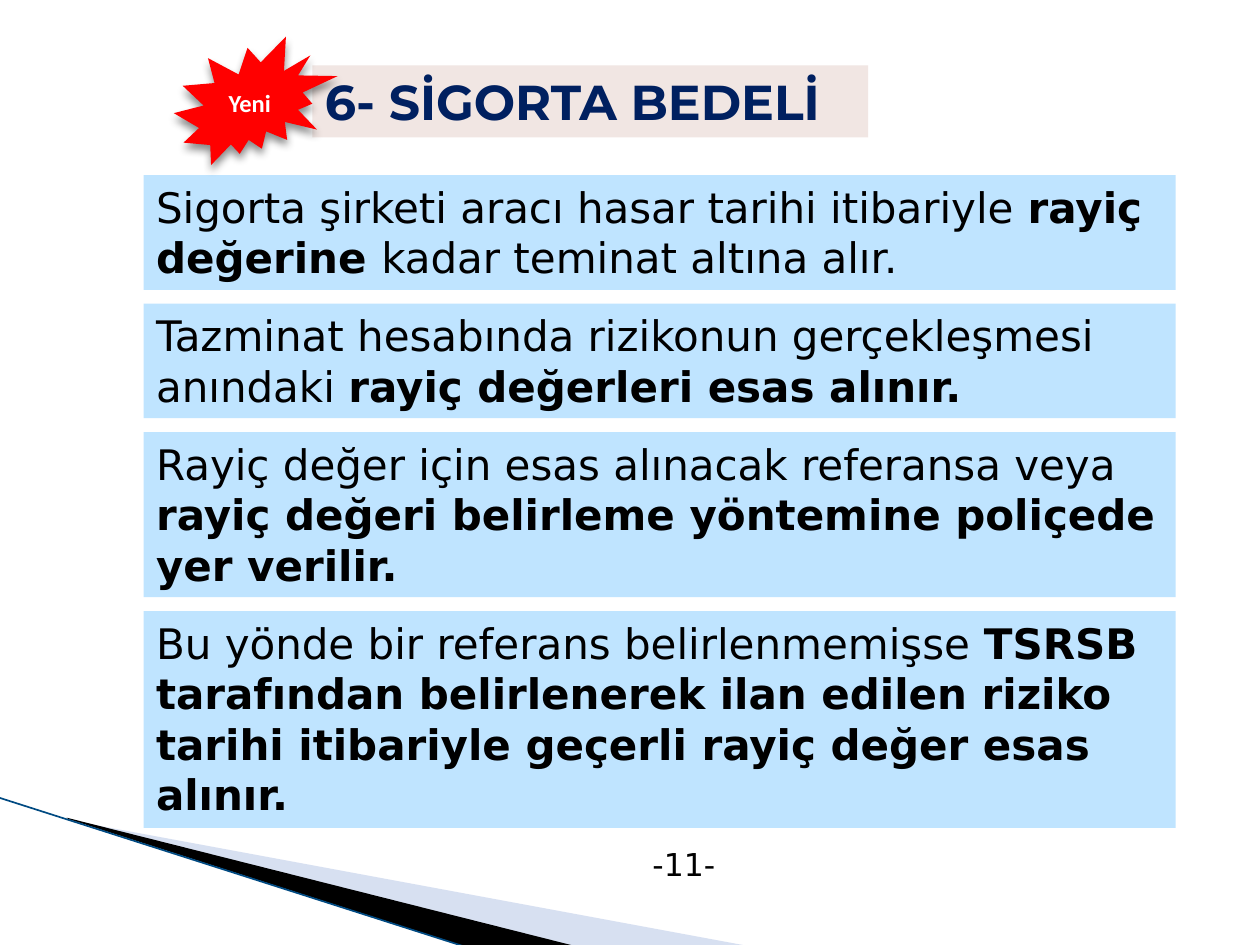
from lxml.etree import SubElement
from pptx import Presentation
from pptx.dml.color import RGBColor
from pptx.enum.shapes import MSO_CONNECTOR, MSO_SHAPE
from pptx.enum.text import MSO_ANCHOR, MSO_AUTO_SIZE, PP_ALIGN
from pptx.oxml.ns import qn
from pptx.util import Inches, Pt

HUES = {
    "pale": "9DB2DD", "black": "000000", "edge": "004A82", "title": "F1E6E3",
    "navy": "002060", "box": "BFE4FF", "seal": "FF0000", "white": "FFFFFF",
}


def paint(shape, hue):
    shape.shadow.inherit = False
    shape.fill.solid()
    shape.fill.fore_color.rgb = RGBColor.from_string(HUES[hue])
    shape.line.fill.background()


def write(shape, parts, size, face, hue, **form):
    frame = shape.text_frame
    base = {"word_wrap": True, "vertical_anchor": MSO_ANCHOR.TOP,
            "auto_size": MSO_AUTO_SIZE.SHAPE_TO_FIT_TEXT}
    for name, value in {**base, **form}.items():
        setattr(frame, name, value)
    para = frame.paragraphs[0]
    para.alignment = PP_ALIGN.LEFT
    for text, bold in parts:
        run = para.add_run()
        run.text = text
        for name, value in {"size": Pt(size), "name": face, "bold": bold}.items():
            setattr(run.font, name, value)
        run.font.color.rgb = RGBColor.from_string(HUES[hue])
    return para


deck = Presentation()
deck.slide_width, deck.slide_height = Inches(10), Inches(7.5)
slide = deck.slides.add_slide(deck.slide_layouts[6])
shapes = slide.shapes

wedges = [
    ("pale", [(0.55, 6.51), (5.95, 7.51), (4.56, 7.51), (0.55, 6.5)]),
    ("black", [(0.53, 6.49), (4.57, 7.51), (3.72, 7.52), (0.54, 6.5)]),
]
for hue, points in wedges:
    spots = [(Inches(x), Inches(y)) for x, y in points]
    pen = shapes.build_freeform(*spots[0])
    pen.add_line_segments(spots[1:], close=True)
    wedge = pen.convert_to_shape()
    paint(wedge, hue)
    if hue == "pale":
        tint = wedge.fill._xPr.find(".//" + qn("a:srgbClr"))
        SubElement(tint, qn("a:alpha"), val="40000")

edge = shapes.add_connector(MSO_CONNECTOR.STRAIGHT, Inches(-0.01), Inches(6.33),
                            Inches(3.71), Inches(7.52))
edge.line.width = Pt(0.95)
edge.line.color.rgb = RGBColor.from_string(HUES["edge"])
SubElement(edge._element.spPr, qn("a:effectLst"))

page = shapes.add_textbox(Inches(5.08), Inches(6.66), Inches(0.75), Inches(0.4))
write(page, [("-11-", False)], 18, "DejaVu Sans", "black", word_wrap=False)

title = shapes.add_shape(MSO_SHAPE.RECTANGLE, Inches(2.48), Inches(0.52),
                         Inches(4.41), Inches(0.57))
paint(title, "title")
write(title, [("6- SİGORTA BEDELİ", True)], 28, "Montserrat", "navy", word_wrap=False)

boxes = [
    (0.91, [("Sigorta şirketi aracı hasar tarihi itibariyle ", False),
            ("rayiç değerine ", True),
            ("kadar teminat altına alır.", False)]),
    (0.91, [("Tazminat hesabında rizikonun gerçekleşmesi anındaki ", False),
            ("rayiç değerleri esas alınır.", True)]),
    (1.31, [("Rayiç değer için esas alınacak referansa veya ", False),
            ("rayiç değeri belirleme yöntemine poliçede yer verilir.", True)]),
    (1.72, [("Bu yönde bir referans belirlenmemişse ", False),
            ("TSRSB tarafından belirlenerek ilan edilen riziko tarihi "
             "itibariyle geçerli rayiç değer esas alınır.", True)]),
]
top = 1.39
for height, parts in boxes:
    box = shapes.add_shape(MSO_SHAPE.RECTANGLE, Inches(1.14), Inches(top),
                           Inches(8.19), Inches(height))
    paint(box, "box")
    write(box, parts, 24, "DejaVu Sans", "black")
    top += height + 0.11

seal = shapes.add_shape(MSO_SHAPE.EXPLOSION2, Inches(1.38), Inches(0.29),
                        Inches(1.3), Inches(1.02))
paint(seal, "seal")
label = write(seal, [("Yeni", True)], 14, "Calibri", "white",
              vertical_anchor=MSO_ANCHOR.MIDDLE, auto_size=MSO_AUTO_SIZE.NONE)
label.alignment = PP_ALIGN.CENTER
label.space_after = Pt(10)
glow = SubElement(seal._element.spPr.find(qn("a:effectLst")), qn("a:outerShdw"),
                  blurRad=str(Pt(5)), dist=str(Pt(3)), dir="5400000", rotWithShape="0")
shade = SubElement(glow, qn("a:srgbClr"), val=HUES["black"])
SubElement(shade, qn("a:alpha"), val="45000")

deck.save("out.pptx")
